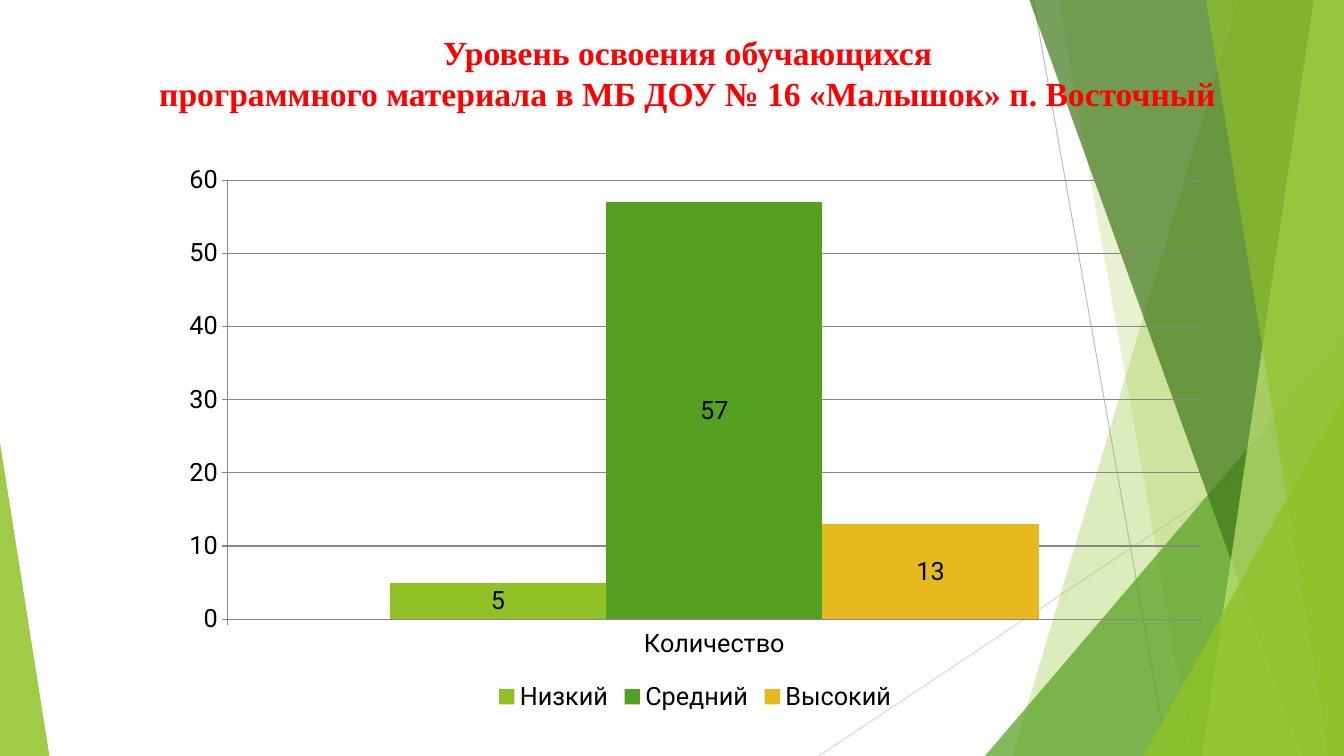
from lxml.etree import SubElement
from pptx import Presentation
from pptx.chart.data import CategoryChartData
from pptx.dml.color import RGBColor
from pptx.enum.chart import XL_CHART_TYPE, XL_LABEL_POSITION, XL_LEGEND_POSITION, XL_TICK_MARK
from pptx.enum.shapes import MSO_CONNECTOR, MSO_SHAPE
from pptx.enum.text import MSO_ANCHOR, MSO_AUTO_SIZE, PP_ALIGN
from pptx.oxml.ns import qn
from pptx.util import Inches, Pt

WIDE, HIGH = Inches(13.33), Inches(7.5)
HUES = {
    "lime": "90C226", "green": "54A021", "dark": "3F7819", "pale": "C0E474",
    "gold": "E6B91E", "gray": "BFBFBF", "mist": "D9D9D9", "grid": "878787",
    "red": "FF0000", "black": "000000",
}
TITLE = [
    "Уровень освоения обучающихся",
    "программного материала в МБ ДОУ № 16 «Малышок» п. Восточный",
]
LEVELS = [("Низкий", 5, "lime"), ("Средний", 57, "green"), ("Высокий", 13, "gold")]


def hue(name):
    return RGBColor.from_string(HUES[name])


def across(share):
    return int(WIDE * share / 100)


def down(share):
    return int(HIGH * share / 100)


def box(left, top, width, height):
    return across(left), down(top), across(width), down(height)


def paint(shape, name, alpha):
    shape.shadow.inherit = False
    shape.fill.solid()
    shape.fill.fore_color.rgb = hue(name)
    shape.line.fill.background()
    color = shape.element.spPr.find(".//" + qn("a:srgbClr"))
    SubElement(color, qn("a:alpha"), val=str(alpha * 1000))


def add_line(slide, start, end, name):
    line = slide.shapes.add_connector(
        MSO_CONNECTOR.STRAIGHT, across(start[0]), down(start[1]), across(end[0]), down(end[1]))
    line.line.color.rgb = hue(name)
    line.line.width = Pt(0.75)
    SubElement(line.element.spPr, qn("a:effectLst"))


def add_band(slide, upper, lower, name, alpha):
    form = slide.shapes.build_freeform(across(upper), 0)
    form.add_line_segments([(WIDE, 0), (WIDE, HIGH), (across(lower), HIGH)])
    paint(form.convert_to_shape(), name, alpha)


def add_wedge(slide, left, top, width, apex, name, alpha):
    wedge = slide.shapes.add_shape(
        MSO_SHAPE.ISOSCELES_TRIANGLE, *box(left, top, width, 100 - top))
    wedge.adjustments[0] = apex
    paint(wedge, name, alpha)


def add_decor(slide):
    add_line(slide, (76.89, 0), (86.87, 100), "gray")
    add_line(slide, (100, 53.73), (60.92, 100), "mist")
    add_band(slide, 92.12, 75.32, "lime", 30)
    add_band(slide, 78.77, 88.75, "lime", 20)
    add_wedge(slide, 73.29, 44.4, 26.71, 1, "green", 72)
    add_band(slide, 76.59, 96.85, "dark", 70)
    add_band(slide, 97.75, 89.42, "pale", 70)
    add_band(slide, 89.72, 98.87, "lime", 65)
    add_wedge(slide, 85.07, 52.4, 14.93, 1, "lime", 80)
    add_wedge(slide, 0, 58.53, 3.68, 0, "lime", 85)


def set_title(slide):
    title = slide.shapes.title
    title.left, title.top, title.width, title.height = box(10.42, 3.6, 81.47, 12.13)
    frame = title.text_frame
    frame.text = "\n".join(TITLE)
    frame.word_wrap = True
    frame.auto_size = MSO_AUTO_SIZE.SHAPE_TO_FIT_TEXT
    frame.vertical_anchor = MSO_ANCHOR.TOP
    for para in frame.paragraphs:
        para.alignment = PP_ALIGN.CENTER
        font = para.runs[0].font
        font.name, font.size, font.bold = "Times New Roman", Pt(24), True
        font.color.rgb = hue("red")
    title.element.getparent().append(title.element)


def style_axis(axis):
    axis.major_tick_mark = XL_TICK_MARK.OUTSIDE
    axis.minor_tick_mark = XL_TICK_MARK.NONE
    axis.format.line.color.rgb = hue("grid")
    axis.format.line.width = Pt(0.75)


def add_levels(slide):
    data = CategoryChartData()
    data.categories = ["Количество"]
    for name, value, _ in LEVELS:
        data.add_series(name, [value])
    chart = slide.shapes.add_chart(
        XL_CHART_TYPE.COLUMN_CLUSTERED, *box(12.53, 20.4, 78.39, 74.4), data).chart
    chart.has_title = False
    chart.font.name, chart.font.size = "Roboto", Pt(18)
    chart.font.color.rgb = hue("black")
    chart.has_legend = True
    chart.legend.position = XL_LEGEND_POSITION.BOTTOM
    chart.legend.include_in_layout = False
    style_axis(chart.category_axis)
    scale = chart.value_axis
    style_axis(scale)
    scale.minimum_scale, scale.maximum_scale, scale.major_unit = 0, 60, 10
    scale.has_major_gridlines = True
    scale.major_gridlines.format.line.color.rgb = hue("grid")
    scale.major_gridlines.format.line.width = Pt(0.75)
    plot = chart.plots[0]
    plot.gap_width, plot.overlap, plot.vary_by_categories = 150, 0, False
    for series, (_, _, name) in zip(plot.series, LEVELS):
        series.format.fill.solid()
        series.format.fill.fore_color.rgb = hue(name)
        series.data_labels.show_value = True
        series.data_labels.position = XL_LABEL_POSITION.CENTER


def main():
    deck = Presentation()
    deck.slide_width, deck.slide_height = WIDE, HIGH
    slide = deck.slides.add_slide(deck.slide_layouts[5])
    add_decor(slide)
    set_title(slide)
    add_levels(slide)
    deck.save("out.pptx")


if __name__ == "__main__":
    main()
